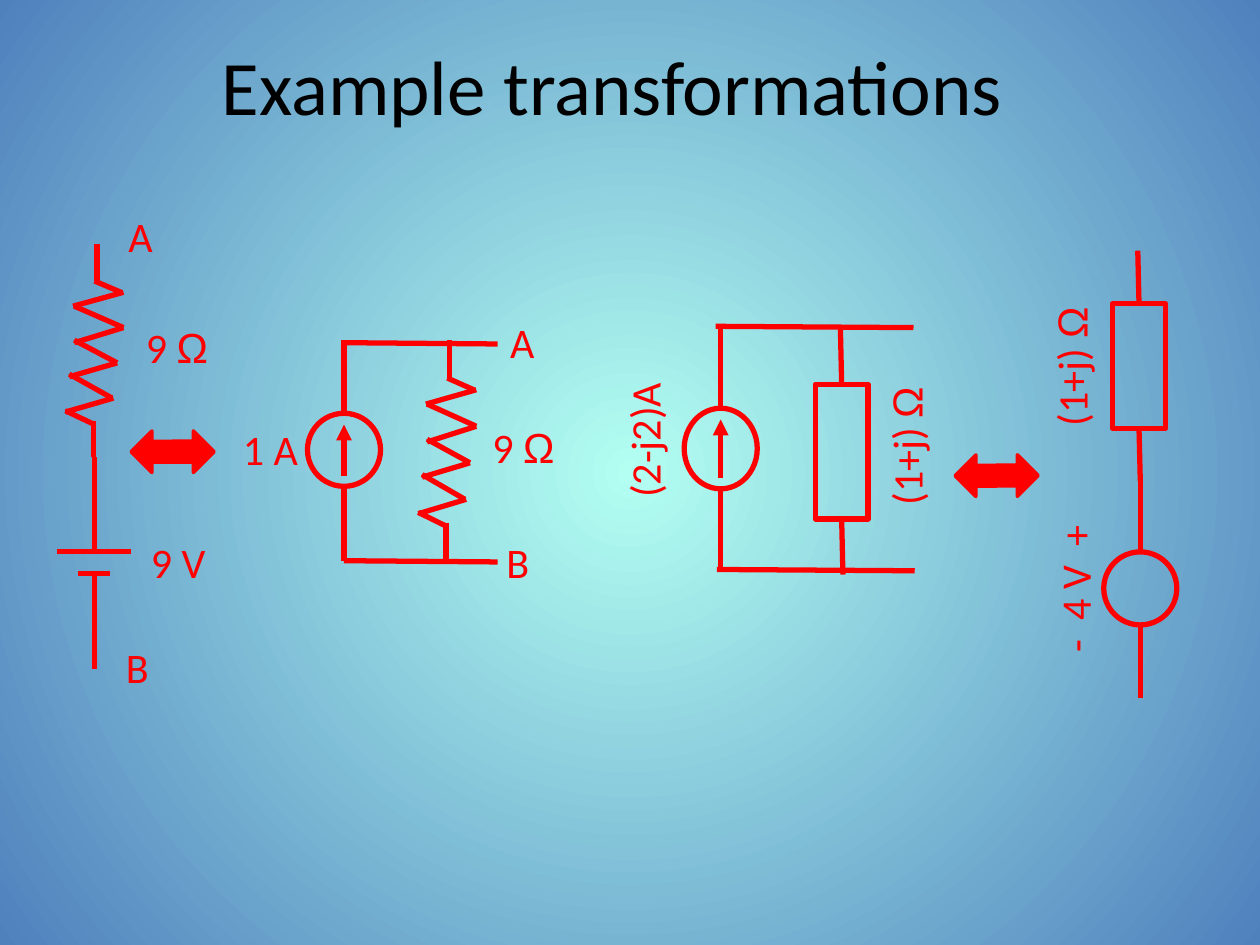
"""Build a slide of equivalent voltage-source and current-source circuits."""
from lxml import etree
from pptx import Presentation
from pptx.dml.color import RGBColor
from pptx.enum.shapes import MSO_CONNECTOR, MSO_SHAPE
from pptx.enum.text import MSO_ANCHOR, MSO_AUTO_SIZE, PP_ALIGN
from pptx.oxml import parse_xml
from pptx.oxml.ns import nsdecls, qn
from pptx.util import Inches, Pt

STRAIGHT = MSO_CONNECTOR.STRAIGHT
ELLIPSE, RECTANGLE, ARROW = MSO_SHAPE.OVAL, MSO_SHAPE.RECTANGLE, MSO_SHAPE.RIGHT_ARROW
MIDDLE, TOP = MSO_ANCHOR.MIDDLE, MSO_ANCHOR.TOP
LEFT, CENTER = PP_ALIGN.LEFT, PP_ALIGN.CENTER
FIT, FIXED = MSO_AUTO_SIZE.SHAPE_TO_FIT_TEXT, MSO_AUTO_SIZE.NONE
COLORS = {"circuit": "FF0000", "title": "000000", "rim": "4F81BD", "glow": "B3FFF2"}
RED = RGBColor.from_string(COLORS["circuit"])

deck = Presentation()
deck.slide_width, deck.slide_height = Inches(10), Inches(7.5)
COLUMN, ROW = deck.slide_width / 10, deck.slide_height / 7.5
page = deck.slides.add_slide(deck.slide_layouts[5])


def grid(*cells):
    """Turn alternating column and row counts into slide lengths."""
    return [round(cell * (ROW if index % 2 else COLUMN)) for index, cell in enumerate(cells)]


def write(box, text, size=24, color="circuit", align=LEFT, anchor=TOP, wrap=False, fit=FIT):
    """Fill a box with one formatted line, setting the ohm sign in Arial."""
    frame = box.text_frame
    frame.word_wrap, frame.auto_size, frame.vertical_anchor = wrap, fit, anchor
    para = frame.paragraphs[0]
    para.alignment = align
    words, ohm, _ = text.partition("Ω")
    for part, font_name in ((words, "Calibri"), (ohm, "Arial")):
        if part:
            span = para.add_run()
            span.text = part
            span.font.name, span.font.size = font_name, Pt(size)
            span.font.color.rgb = RGBColor.from_string(COLORS[color])


page.background.fill.gradient()
gradient = page.background.fill._fill._gradFill
gradient.getparent().replace(gradient, parse_xml(
    f'<a:gradFill {nsdecls("a")} rotWithShape="1"><a:gsLst>'
    f'<a:gs pos="0"><a:srgbClr val="{COLORS["glow"]}"/></a:gs>'
    f'<a:gs pos="100000"><a:srgbClr val="{COLORS["rim"]}"/></a:gs></a:gsLst>'
    '<a:path path="circle"><a:fillToRect l="50000" t="50000" r="50000" b="50000"/></a:path>'
    '</a:gradFill>'))

title = page.shapes.title
title.left, title.top, title.width, title.height = grid(0.36, 0.08, 9, 1.18)
write(title, "Example transformations", size=44, color="title", align=CENTER,
      anchor=MIDDLE, wrap=True, fit=FIXED)

zigzag = [
    (0.77, 2.23, 0.77, 1.94), (0.96, 2.32, 0.75, 2.23), (0.58, 2.43, 0.98, 2.32),
    (0.59, 2.43, 0.98, 2.6), (0.59, 2.72, 0.98, 2.6), (0.59, 2.7, 0.93, 2.88),
    (0.55, 2.99, 0.93, 2.88), (0.55, 2.97, 0.89, 3.16), (0.52, 3.27, 0.9, 3.16),
    (0.52, 3.26, 0.73, 3.36), (0.74, 3.63, 0.74, 3.34),
]
stretch = 1.75 / 1.69
shifted_zigzag = [
    (x1 + 2.8, 2.7 + (y1 - 1.94) * stretch, x2 + 2.8, 2.7 + (y2 - 1.94) * stretch)
    for x1, y1, x2, y2 in zigzag
]
battery = [(0.75, 3.63, 0.75, 4.38), (0.75, 4.56, 0.75, 5.31),
           (1.04, 4.38, 0.45, 4.38), (0.87, 4.55, 0.62, 4.55)]
resistive_loop = [(2.73, 2.7, 2.73, 3.28), (2.73, 3.87, 2.73, 4.45),
                  (2.73, 2.72, 3.95, 2.73), (2.73, 4.45, 3.95, 4.46)]
impedance_loop = [(6.68, 3.05, 6.67, 2.6), (6.69, 4.56, 6.68, 4.12),
                  (5.72, 2.6, 5.72, 3.24), (5.72, 3.88, 5.72, 4.52),
                  (5.68, 2.59, 7.25, 2.6), (5.69, 4.52, 7.26, 4.53)]
impedance_branch = [(9.05, 3.79, 9.05, 4.38), (9.05, 4.96, 9.05, 5.54),
                    (9.04, 2.41, 9.03, 1.99), (9.05, 3.82, 9.04, 3.4)]

halves = [
    {"wires": zigzag + shifted_zigzag + battery + resistive_loop,
     "current": (2.73, 3.78, 2.73, 3.37),
     "outlines": [(ELLIPSE, 2.44, 3.28, 0.58, 0.58)],
     "swap": (1.04, 3.42),
     "labels": [("9 Ω", 1.06, 2.5, 0.71, 0), ("9 V", 1.1, 4.21, 0.64, 0),
                ("9 Ω", 3.81, 3.3, 0.71, 0), ("1 A", 1.83, 3.31, 0.64, 0),
                ("A", 0.92, 1.62, 0.4, 0), ("B", 0.9, 5.04, 0.4, 0),
                ("B", 3.92, 4.21, 0.4, 0), ("A", 3.95, 2.46, 0.4, 0)]},
    {"wires": impedance_loop + impedance_branch,
     "current": (5.72, 3.79, 5.72, 3.33),
     "outlines": [(ELLIPSE, 8.76, 4.38, 0.58, 0.58), (ELLIPSE, 5.43, 3.24, 0.58, 0.64),
                  (RECTANGLE, 6.47, 3.05, 0.42, 1.07), (RECTANGLE, 8.83, 2.41, 0.42, 0.99)],
     "swap": (7.58, 3.61),
     "labels": [("(1+j) Ω", 6.61, 3.28, 1.16, 270), ("(1+j) Ω", 7.92, 2.65, 1.16, 270),
                ("(2-j2)A", 4.51, 3.2, 1.2, 270), ("-  4 V  +", 7.92, 4.42, 1.21, 270)]},
]

for half in halves:
    group = page.shapes.add_group_shape()
    for ends in half["wires"] + [half["current"]]:
        wire = group.shapes.add_connector(STRAIGHT, *grid(*ends))
        wire.line.color.rgb, wire.line.width = RED, Pt(3)
        if ends == half["current"]:
            etree.SubElement(wire.line._get_or_add_ln(), qn("a:tailEnd"), type="triangle")
        etree.SubElement(wire._element.spPr, qn("a:effectLst"))

    for kind, *place in half["outlines"]:
        outline = group.shapes.add_shape(kind, *grid(*place))
        outline.shadow.inherit = False
        outline.fill.background()
        outline.line.color.rgb, outline.line.width = RED, Pt(3)

    left, top = half["swap"]
    for step, turn in enumerate((180, 0)):
        arrow = group.shapes.add_shape(ARROW, *grid(left + step * 0.33, top, 0.33, 0.33))
        arrow.rotation = turn
        arrow.shadow.inherit = False
        arrow.fill.solid()
        arrow.fill.fore_color.rgb = RED
        arrow.line.color.rgb, arrow.line.width = RED, Pt(2)

    for text, left, top, width, turn in half["labels"]:
        label = group.shapes.add_textbox(*grid(left, top, width, 0.5))
        label.rotation = turn
        write(label, text)

deck.save("out.pptx")
